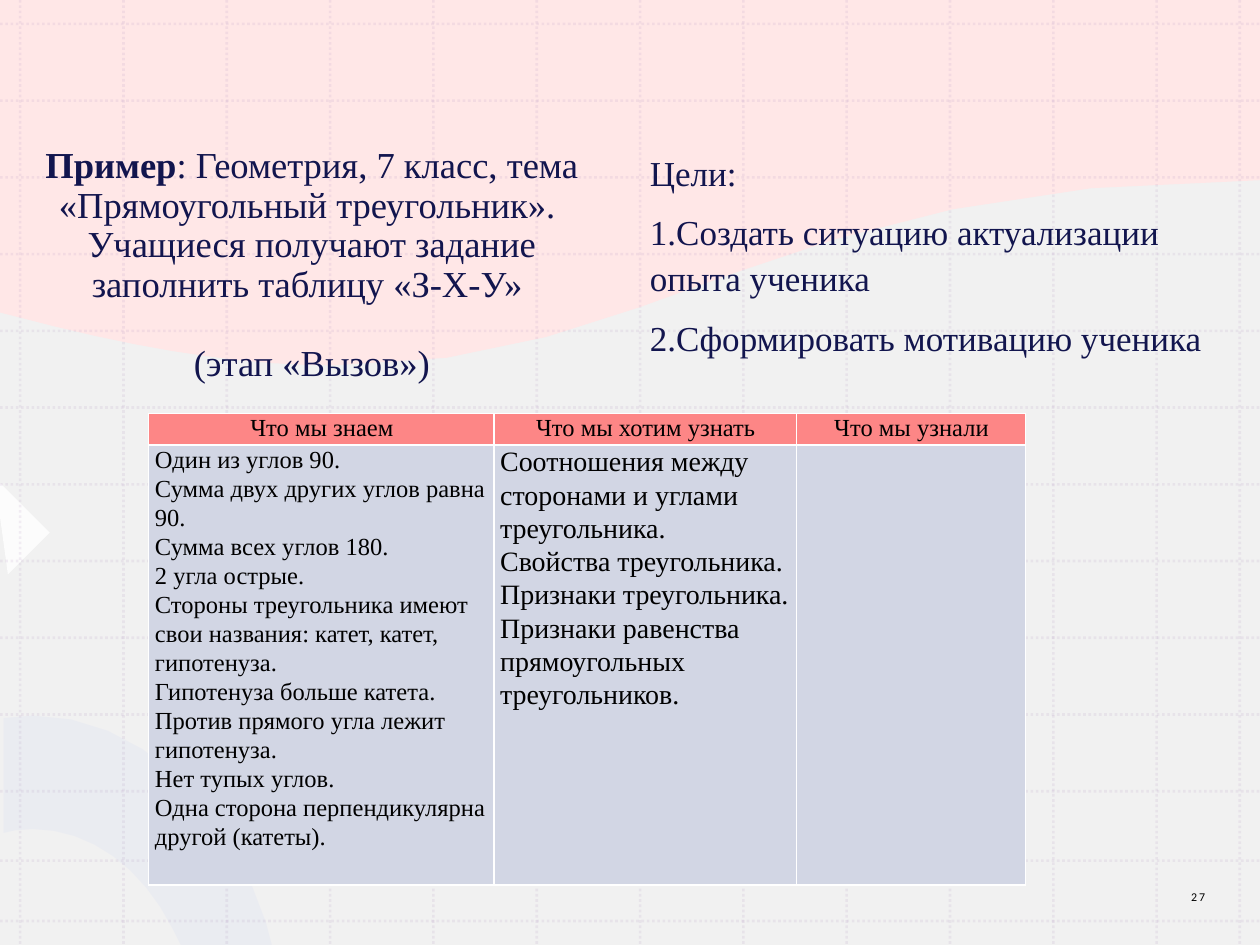
from lxml import etree
from pptx import Presentation
from pptx.dml.color import RGBColor
from pptx.enum import dml, shapes, text
from pptx.oxml.ns import qn
from pptx.util import Inches, Pt


def tint(fill, code, root=None, alpha=100):
    fill.solid()
    fill.fore_color.rgb = RGBColor.from_string(code)
    if alpha < 100:
        mark = next(root.iter(qn("a:srgbClr")))
        etree.SubElement(mark, qn("a:alpha")).set("val", str(alpha * 1000))


def write(frame, lines, code, size, look, face="Times New Roman"):
    frame.word_wrap = True
    for i, line in enumerate(lines):
        par = frame.paragraphs[0] if i == 0 else frame.add_paragraph()
        for name, val in look.items():
            setattr(par, name, val)
        if i == 0:
            par.space_before = Pt(0)
        parts = line.split("*")
        for j, part in enumerate(parts):
            run = par.add_run()
            run.text = part
            form = {"name": face, "size": Pt(size), "bold": j < len(parts) - 1}
            for name, val in form.items():
                setattr(run.font, name, val)
            tint(run.font.fill, code)


deck = Presentation()
deck.slide_width, deck.slide_height = Inches(10), Inches(7.5)
slide = deck.slides.add_slide(deck.slide_layouts[6])
pool = slide.shapes
mid = text.PP_ALIGN.CENTER
left = text.PP_ALIGN.LEFT

wave = [
    [(2.65, 2.9)],
    [(2.03, 2.9), (1.32, 2.81), (0.43, 2.59)],
    [(0, 2.48)], [(0, -0.01)], [(10, -0.01)], [(10, 1.43)],
    [(6.08, 1.43), (5.23, 2.91), (2.65, 2.9)],
]
ring = [
    [(0.26, 5.68)],
    [(1.09, 5.68), (1.81, 6.36), (2.11, 7.32)],
    [(2.16, 7.51)], [(1.44, 7.51)], [(1.37, 7.37)],
    [(1.13, 6.89), (0.72, 6.58), (0.26, 6.58)],
    [(0.12, 6.59)], [(0.03, 6.61)], [(0.03, 5.7)], [(0.26, 5.68)],
]
kind = shapes.MSO_SHAPE
decor = [
    (kind.RECTANGLE, (0, 0, 10, 7.5), 0, "EEEEEE", 80),
    (wave, None, 0, "FFE7E7", 100),
    (kind.RIGHT_TRIANGLE, (-0.3, 3.94, 0.62, 0.47), 225, "FFFFFF", 80),
    (ring, None, 0, "E9EBF1", 80),
]
for form, box, turn, code, alpha in decor:
    if box:
        item = pool.add_shape(form, *map(Inches, box))
    else:
        dots = [form[0][0]]
        for step in form[1:]:
            if len(step) == 1:
                dots += step
                continue
            curve = [dots[-1]] + step
            for n in range(1, 9):
                t = n / 8
                mix = ((1 - t) ** 3, 3 * t * (1 - t) ** 2, 3 * t * t * (1 - t), t ** 3)
                dots.append(tuple(sum(m * p[k] for m, p in zip(mix, curve)) for k in (0, 1)))
        spots = [(Inches(x), Inches(y)) for x, y in dots]
        pen = pool.build_freeform(*spots[0])
        pen.add_line_segments(spots[1:])
        item = pen.convert_to_shape()
    item.rotation = turn
    item.shadow.inherit = False
    item.line.fill.background()
    tint(item.fill, code, item.element.spPr, alpha)

cols = [0.16 + 0.82 * i for i in range(12)] + [9.84]
rows = [0.19 + 0.609 * i for i in range(11)] + [6.83, 7.31]
grid = [(x, 0, x, 7.5) for x in cols] + [(0, y, 10, y) for y in rows]
for ends in grid:
    rule = pool.add_connector(shapes.MSO_CONNECTOR.STRAIGHT, *map(Inches, ends))
    tint(rule.line.fill, "B495C2", rule.element.spPr, 15)
    rule.line.width = Pt(1.5)
    rule.line.dash_style = dml.MSO_LINE.ROUND_DOT
    etree.SubElement(rule.element.spPr, qn("a:effectLst"))

head = pool.add_textbox(*map(Inches, (0.2, 1.12, 4.55, 2.24))).text_frame
write(head, [
    "Пример*: Геометрия, 7 класс, тема «Прямоугольный треугольник». ",
    "Учащиеся получают задание заполнить таблицу «З-Х-У» ",
    "(этап «Вызов»)",
], "12154E", 20.9, {"alignment": mid, "line_spacing": 0.9})
head.paragraphs[-1].space_before = Pt(22.5)

goals = pool.add_textbox(*map(Inches, (5.06, 1.12, 4.77, 2.23))).text_frame
write(goals, [
    "Цели:",
    "1.Создать ситуацию актуализации опыта ученика",
    "2.Сформировать мотивацию ученика",
], "12154E", 20, {"line_spacing": 1.1, "space_before": Pt(7.5)})

page = pool.add_textbox(*map(Inches, (9.18, 6.92, 0.66, 0.4))).text_frame
page.vertical_anchor = text.MSO_ANCHOR.MIDDLE
write(page, ["27"], "000000", 6.8, {"alignment": mid}, "Calibri")
next(page.paragraphs[0].runs[0]._r.iter(qn("a:rPr"))).set("spc", "110")

data = [
    [["Что мы знаем"], ["Что мы хотим узнать"], ["Что мы узнали"]],
    [
        [
            "Один из углов 90.",
            "Сумма двух других углов равна 90.",
            "Сумма всех углов 180.",
            "2 угла острые.",
            "Стороны треугольника имеют свои названия: катет, катет, гипотенуза.",
            "Гипотенуза больше катета.",
            "Против прямого угла лежит гипотенуза.",
            "Нет тупых углов.",
            "Одна сторона перпендикулярна другой (катеты).",
        ],
        [
            "Соотношения между сторонами и углами треугольника.",
            "Свойства треугольника.",
            "Признаки треугольника.",
            "Признаки равенства прямоугольных треугольников.",
        ],
        [],
    ],
]
table = pool.add_table(2, 3, *map(Inches, (1.18, 3.28, 6.96, 3.45))).table
for col, wide in zip(table.columns, (2.74, 2.4, 1.82)):
    col.width = Inches(wide)
for row, high in zip(table.rows, (0.23, 3.22)):
    row.height = Inches(high)
pads = {"margin_left": 0.05, "margin_right": 0.04, "margin_top": 0, "margin_bottom": 0}
for r, row in enumerate(data):
    for c, lines in enumerate(row):
        cell = table.cell(r, c)
        for name, val in pads.items():
            setattr(cell, name, Inches(val))
        look = {"alignment": left if r else mid, "line_spacing": 1.07}
        write(cell.text_frame, lines, "000000", 16 if r and c else 14, look)
        props = cell._tc.get_or_add_tcPr()
        for side in "LRTB":
            edge = etree.SubElement(props, qn("a:ln" + side), w=str(Pt(1)))
            paint = etree.SubElement(edge, qn("a:solidFill"))
            etree.SubElement(paint, qn("a:srgbClr"), val="FFFFFF")
        tint(cell.fill, "D2D6E4" if r else "FD8686")

deck.save("out.pptx")
